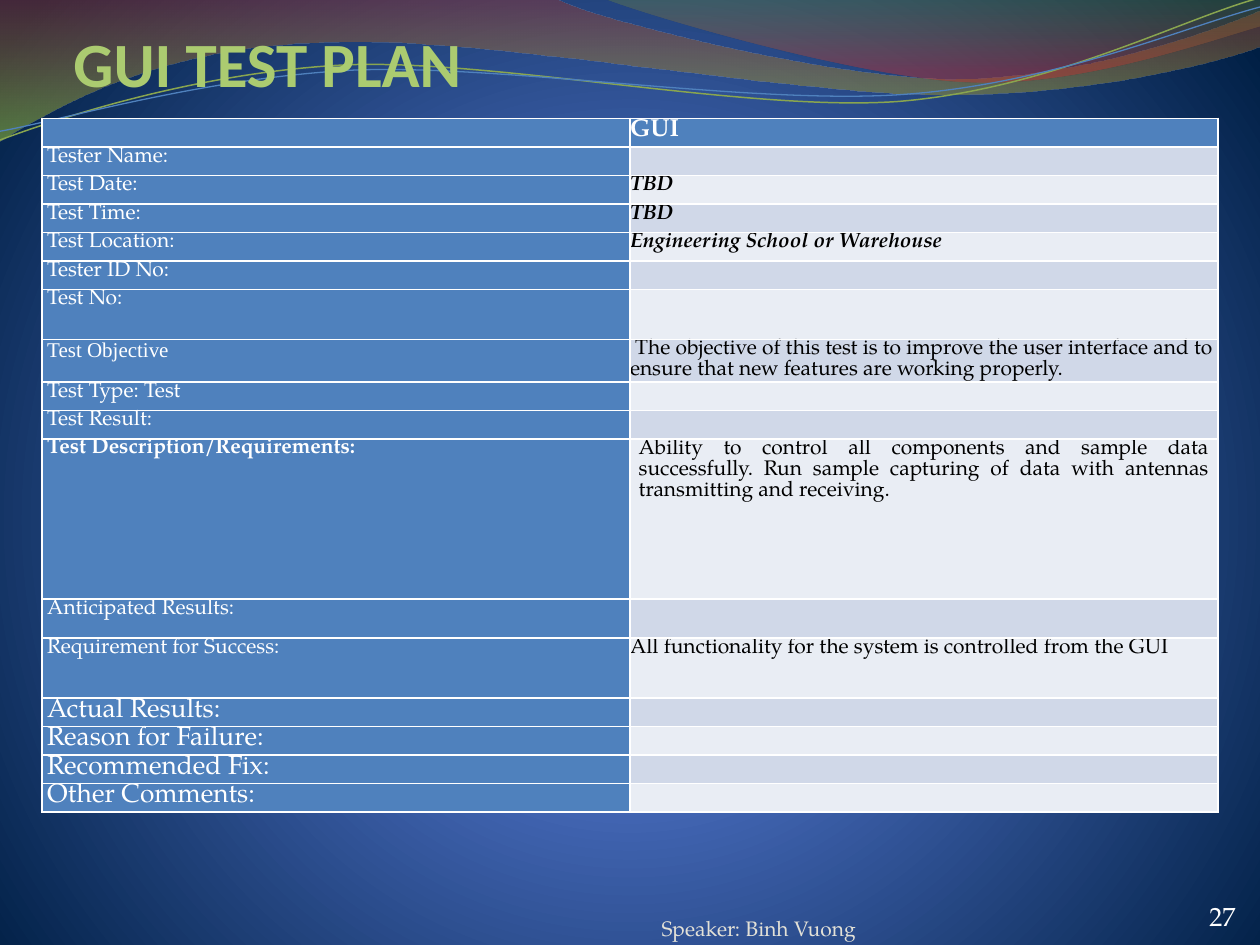
import math

from lxml import etree
from pptx import Presentation
from pptx import util as u
from pptx.dml.color import RGBColor
from pptx.enum import text
from pptx.oxml import parse_xml
from pptx.oxml.ns import qn

Pt = u.Pt
A = 'xmlns:a="http://schemas.openxmlformats.org/drawingml/2006/main"'
SERIF = "TeX Gyre Pagella"
BLUE, WHITE, BLACK = "4F81BD", "FFFFFF", "000000"
BANDS = ("D0D8E8", "E9EDF4")
DOWNWARD = '<a:lin ang="5400000" scaled="0"/>'
FROM_BELOW = ('<a:path path="circle"><a:fillToRect l="10000" t="110000" '
              'r="10000" b="100000"/></a:path>')

LABEL, PLAIN, STRONG, INDENTED = "label", "plain", "strong", "indented"
LINE = 16.3
ROWS = [
    ("Tester Name:", "", PLAIN, LINE),
    ("Test Date:", "TBD", STRONG, LINE),
    ("Test Time:", "TBD", STRONG, LINE),
    ("Test Location:", "Engineering School or Warehouse", STRONG, LINE),
    ("Tester ID No:", "", PLAIN, LINE),
    ("Test No:", "", PLAIN, 28.4),
    ("Test Objective", " The objective of this test is to improve the user interface "
     "and to ensure that new features are working properly.", PLAIN, 24.2),
    ("Test Type: Test", "", PLAIN, LINE),
    ("Test Result:", "", PLAIN, LINE),
    ("Test Description/Requirements:", "Ability to control all components and sample data "
     "successfully. Run sample capturing of data with antennas transmitting and receiving.",
     INDENTED, 91.7),
    ("Anticipated Results:", "", PLAIN, 22.2),
    ("Requirement for Success:",
     "All functionality for the system is controlled from the GUI", PLAIN, 34.2),
    ("Actual Results:", "", PLAIN, LINE),
    ("Reason for Failure:", "", PLAIN, LINE),
    ("Recommended Fix:", "", PLAIN, LINE),
    ("Other Comments:", "", PLAIN, LINE),
]
LARGE_FROM = 12

WAVES = [
    ((0, 0), [(317, -1), (343, 12, 478, 45, 546, 45), (614, 45, 690, 19, 720, 6), (721, 26),
              (708, 32, 626, 55, 537, 54), (448, 54, 275, 20, 185, 24),
              (93, 26, 33, 60, -1, 81)],
     [(0, "973330", 45), (100, "95C238", 55)]),
    ((345, -1), [(367, 8, 491, 45, 554, 47), (616, 50, 692, 23, 720, 15), (720, 0)],
     [(0, "769537", 30), (80, "BE3330", 45)]),
]
STRANDS = [
    ((0, 80), [(35, 67, 114, 41, 199, 37), (284, 34, 427, 64, 513, 58),
               (600, 51, 675, 11, 719, -1)], (359.3, 41.4), "89A54F", 0.85),
    ((0, 75), [(34, 69, 118, 44, 204, 40), (290, 37, 430, 60, 516, 54),
               (602, 48, 678, 15, 720, 4)], (359.6, 42.5), BLUE, 0.75),
]
TILT = 2.7


def color(value):
    return RGBColor.from_string(value)


def set_gradient(properties, stops, direction):
    listed = "".join(
        f'<a:gs pos="{pos * 1000}"><a:srgbClr val="{value}">'
        f'<a:alpha val="{opacity * 1000}"/></a:srgbClr></a:gs>'
        for pos, value, opacity in stops)
    gradient = parse_xml(f'<a:gradFill {A} rotWithShape="1"><a:gsLst>{listed}</a:gsLst>'
                         f'{direction}</a:gradFill>')
    properties.replace(properties.find(qn("a:solidFill")), gradient)


def style(paragraph, size, value, font=SERIF, bold=False, italic=False):
    face = paragraph.font
    face.name, face.size, face.bold, face.italic = font, Pt(size), bold, italic
    face.color.rgb = color(value)


def set_insets(target, left, top, right, bottom):
    target.margin_left, target.margin_top = Pt(left), Pt(top)
    target.margin_right, target.margin_bottom = Pt(right), Pt(bottom)


def turn(point, center, degrees):
    angle = math.radians(degrees)
    x, y = point[0] - center[0], point[1] - center[1]
    return (center[0] + x * math.cos(angle) - y * math.sin(angle),
            center[1] + x * math.sin(angle) + y * math.cos(angle))


def add_curve(slide, left, top, start, segments, close, center=(0, 0), tilt=0):
    points = [start] + [pair for segment in segments
                        for pair in zip(segment[::2], segment[1::2])]
    turned = [turn(point, center, tilt) for point in points]
    first, *rest = [(Pt(left + x), Pt(top + y)) for x, y in turned]
    builder = slide.shapes.build_freeform(*first)
    builder.add_line_segments(rest, close=close)
    curve = builder.convert_to_shape()
    curve.shadow.inherit = False
    curve.rotation = -tilt
    steps = iter(curve.element.findall(".//" + qn("a:lnTo")))
    for segment in segments:
        step = next(steps)
        if len(segment) == 6:
            step.addprevious(bend := parse_xml(f"<a:cubicBezTo {A}/>"))
            for control in (step, next(steps), next(steps)):
                bend.append(control[0])
                control.getparent().remove(control)
    return curve


def add_backdrop(slide, left, top):
    slide.background.fill.solid()
    set_gradient(slide.element.find(".//" + qn("p:bgPr")),
                 [(0, "4D75D6", 100), (25, "4E72C7", 100), (100, "001F44", 100)], FROM_BELOW)
    for start, segments, stops in WAVES:
        wave = add_curve(slide, left, top, start, segments, True)
        wave.fill.solid()
        wave.line.fill.background()
        set_gradient(wave.element.spPr, stops, DOWNWARD)
    for start, segments, center, value, width in STRANDS:
        strand = add_curve(slide, left, top, start, segments, False, center, TILT)
        strand.fill.background()
        strand.line.color.rgb = color(value)
        strand.line.width = Pt(width)


def set_borders(cell):
    properties = cell._tc.get_or_add_tcPr()
    for index, side in enumerate(("lnL", "lnR", "lnT", "lnB")):
        properties.insert(index, etree.fromstring(
            f'<a:{side} {A} w="{Pt(1)}"><a:solidFill><a:srgbClr val="{WHITE}"/>'
            f'</a:solidFill></a:{side}>'))


def fill_cell(cell, words, fill, role, size=12, value=BLACK, font=SERIF, bold=False):
    cell.fill.solid()
    cell.fill.fore_color.rgb = color(fill)
    side = {LABEL: 3, INDENTED: 5}.get(role, 0)
    set_insets(cell, side, 0, side, 0)
    cell.text = words
    paragraph = cell.text_frame.paragraphs[0]
    if role in (LABEL, INDENTED):
        paragraph.alignment = text.PP_ALIGN.JUSTIFY
    style(paragraph, size, value, font, bold or role == STRONG, role == STRONG)
    set_borders(cell)


def add_plan(slide, left, top, width):
    heights = [LINE] + [row[-1] for row in ROWS]
    plan = slide.shapes.add_table(len(heights), 2, Pt(left), Pt(top),
                                  Pt(width), Pt(sum(heights))).table
    plan.horz_banding = False
    for column in plan.columns:
        column.width = Pt(width / 2)
    for row, height in zip(plan.rows, heights):
        row.height = Pt(height)
    for column, heading in enumerate(("", "GUI")):
        fill_cell(plan.cell(0, column), heading, BLUE, PLAIN, 14, WHITE, bold=True)
    for index, (label, entry, role, _) in enumerate(ROWS):
        fill_cell(plan.cell(index + 1, 0), label, BLUE, LABEL,
                  15 if index >= LARGE_FROM else 12, WHITE,
                  "Times New Roman" if label == "Test Objective" else SERIF,
                  label.startswith("Test Description"))
        fill_cell(plan.cell(index + 1, 1), entry, BANDS[index % 2], role)


def add_words(slide, box, words, size, value, font=SERIF, bold=False,
              anchor=text.MSO_ANCHOR.BOTTOM, insets=(0, 0, 0, 0), wrap=True):
    frame = slide.shapes.add_textbox(*map(Pt, box)).text_frame
    frame.word_wrap = wrap
    frame.vertical_anchor = anchor
    set_insets(frame, *insets)
    frame.text = words
    style(frame.paragraphs[0], size, value, font, bold)


def add_footer(slide, left, top):
    add_words(slide, (left, top, 264, 29), "Speaker: Binh Vuong", 12, "E3E1D7")
    add_words(slide, (left + 306, top + 2.5, 30, 25), "27", 15, WHITE,
              anchor=text.MSO_ANCHOR.TOP, insets=(7.2, 3.6, 7.2, 3.6), wrap=False)


def main():
    deck = Presentation()
    deck.slide_width, deck.slide_height = Pt(720), Pt(540)
    slide = deck.slides.add_slide(deck.slide_layouts[6])
    add_backdrop(slide, 0, 0)
    add_plan(slide, 24, 67.7, 672)
    add_footer(slide, 378, 508.5)
    add_words(slide, (42, 3, 618, 54), "GUI TEST PLAN", 36, "ABCB70", "Calibri", True,
              insets=(0, 3.6, 0, 0))
    deck.save("out.pptx")


if __name__ == "__main__":
    main()
